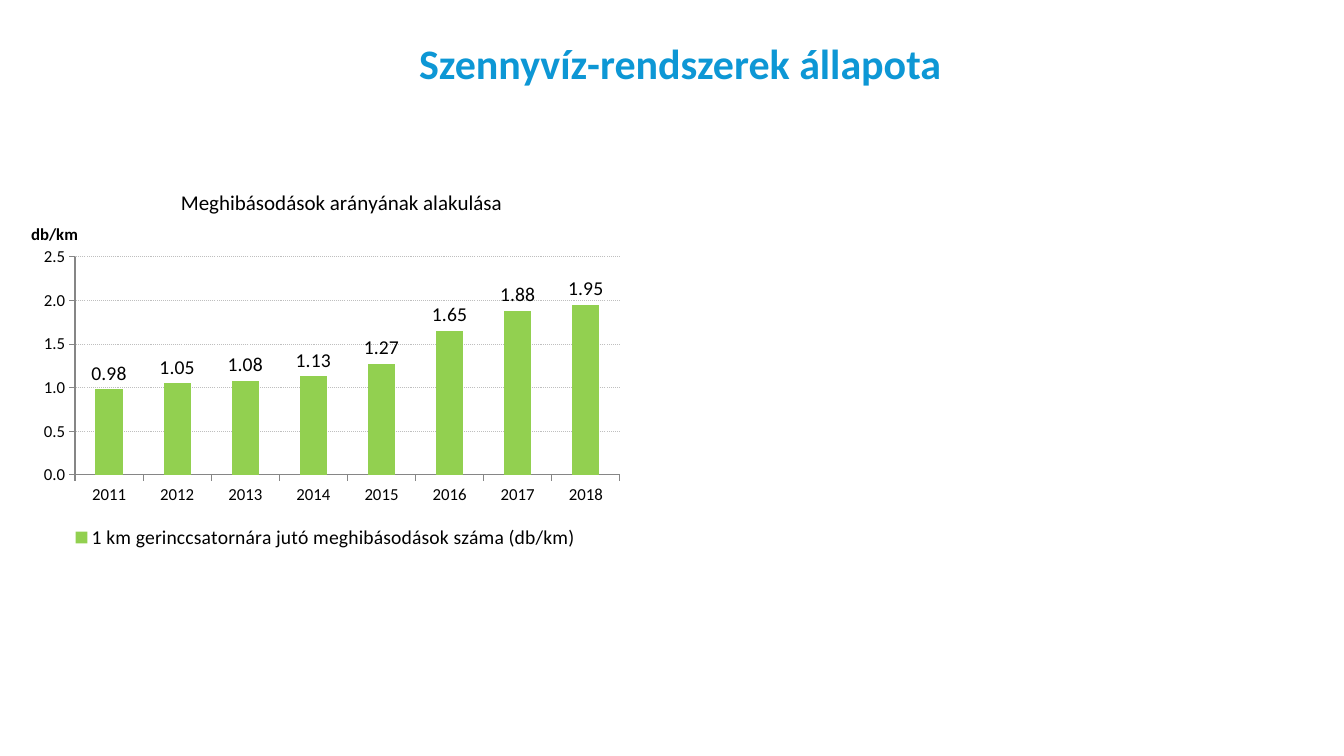
from lxml import etree
from pptx import Presentation
from pptx.chart.data import CategoryChartData
from pptx.dml.color import RGBColor
from pptx.enum.chart import XL_CHART_TYPE, XL_LABEL_POSITION, XL_LEGEND_POSITION, XL_TICK_MARK
from pptx.enum.dml import MSO_LINE
from pptx.enum.text import MSO_ANCHOR, PP_ALIGN
from pptx.oxml.ns import qn
from pptx.util import Emu, Pt

TITLE = "Szennyvíz-rendszerek állapota"
CHART_TITLE = "Meghibásodások arányának alakulása"
UNIT = "db/km"
SERIES = "1 km gerinccsatornára jutó meghibásodások száma (db/km)"
FAILURES = {
    "2011": 0.98, "2012": 1.05, "2013": 1.08, "2014": 1.13,
    "2015": 1.27, "2016": 1.65, "2017": 1.88, "2018": 1.95,
}

# Boxes in px: left, top, width, height
SLIDE_SIZE = (1344, 756)
TITLE_BOX = (229, 30, 903, 72)
CHART_BOX = (24, 177, 602, 419)
PLOT_BOX = (75, 257, 545, 218)
LEGEND_BOX = (71, 523, 509, 29)
CHART_TITLE_POS = (177, 184)
UNIT_POS = (28, 220)

FONT = "Calibri"
BLUE = RGBColor(0x0D, 0x97, 0xD5)
GREEN = RGBColor(0x92, 0xD0, 0x50)
BLACK = RGBColor(0, 0, 0)
GRID_GRAY = RGBColor(0xBF, 0xBF, 0xBF)
AXIS_GRAY = RGBColor(0x86, 0x86, 0x86)

CLUSTERED = XL_CHART_TYPE.COLUMN_CLUSTERED
OUTSIDE_END = XL_LABEL_POSITION.OUTSIDE_END
BOTTOM = XL_LEGEND_POSITION.BOTTOM
TICK_OUT = XL_TICK_MARK.OUTSIDE
SYS_DOT = MSO_LINE.ROUND_DOT
MIDDLE = MSO_ANCHOR.MIDDLE
CENTER = PP_ALIGN.CENTER


def px(*lengths):
    return [Emu(round(n * 914400 / 100.8)) for n in lengths]


def style(font, size, color=BLACK, bold=False):
    font.name, font.size, font.bold = FONT, Pt(size), bold
    font.color.rgb = color


def place(element, box, index, inner=False):
    """Give a chart part a manual layout, as its child number index."""
    for old in element.findall(qn("c:layout")):
        element.remove(old)
    layout = etree.Element(qn("c:layout"))
    element.insert(index, layout)
    manual = etree.SubElement(layout, qn("c:manualLayout"))
    left, top, width, height = CHART_BOX
    shares = [(box[0] - left) / width, (box[1] - top) / height]
    if len(box) == 4:
        shares += [box[2] / width, box[3] / height]
    settings = [("layoutTarget", "inner")] if inner else []
    settings += [("xMode", "edge"), ("yMode", "edge")]
    settings += [(key, f"{share:.4f}") for key, share in zip("xywh", shares)]
    for key, value in settings:
        etree.SubElement(manual, qn(f"c:{key}")).set("val", value)


def write_title(title, text, pos, size, bold=False):
    tf = title.text_frame
    r = tf.paragraphs[0].add_run()
    r.text = text
    style(r.font, size, bold=bold)
    body = tf._txBody.find(qn("a:bodyPr"))
    body.set("rot", "0")
    body.set("vert", "horz")
    place(title._element, pos, 1)


def add_title(s):
    tf = s.shapes.add_textbox(*px(*TITLE_BOX)).text_frame
    tf.word_wrap = True
    tf.vertical_anchor = MIDDLE
    p = tf.paragraphs[0]
    p.alignment = CENTER
    p.line_spacing = 0.9
    r = p.add_run()
    r.text = TITLE
    style(r.font, 30, BLUE, True)


def add_failure_chart(s):
    data = CategoryChartData()
    data.categories = list(FAILURES)
    data.add_series(SERIES, list(FAILURES.values()))
    chart = s.shapes.add_chart(CLUSTERED, *px(*CHART_BOX), data).chart
    style(chart.font, 14)
    place(chart._chartSpace.chart.plotArea, PLOT_BOX, 0, inner=True)

    chart.has_title = True
    write_title(chart.chart_title, CHART_TITLE, CHART_TITLE_POS, 15)
    chart.has_legend = True
    legend = chart.legend
    legend.position = BOTTOM
    legend.include_in_layout = False
    style(legend.font, 14)
    place(legend._element, LEGEND_BOX, 1)

    plot = chart.plots[0]
    plot.vary_by_categories = False
    plot.gap_width = 150
    bars = plot.series[0]
    bars.format.fill.solid()
    bars.format.fill.fore_color.rgb = GREEN
    plot.has_data_labels = True
    labels = plot.data_labels
    labels.show_value = True
    labels.position = OUTSIDE_END
    labels.number_format, labels.number_format_is_linked = "0.00", False
    style(labels.font, 14)

    years, rate = chart.category_axis, chart.value_axis
    for axis in (years, rate):
        axis.major_tick_mark = TICK_OUT
        axis.format.line.color.rgb = AXIS_GRAY
        axis.format.line.width = Pt(0.75)
        style(axis.tick_labels.font, 12)
    rate.minimum_scale, rate.maximum_scale, rate.major_unit = 0, 2.5, 0.5
    rate.tick_labels.number_format = "#,##0.0"
    rate.tick_labels.number_format_is_linked = False
    rate.has_major_gridlines = True
    grid = rate.major_gridlines.format.line
    grid.color.rgb, grid.width, grid.dash_style = GRID_GRAY, Pt(0.75), SYS_DOT
    rate.has_title = True
    write_title(rate.axis_title, UNIT, UNIT_POS, 12, True)


def main():
    prs = Presentation()
    prs.slide_width, prs.slide_height = px(*SLIDE_SIZE)
    s = prs.slides.add_slide(prs.slide_layouts[6])
    add_title(s)
    add_failure_chart(s)
    prs.save("out.pptx")


if __name__ == "__main__":
    main()
